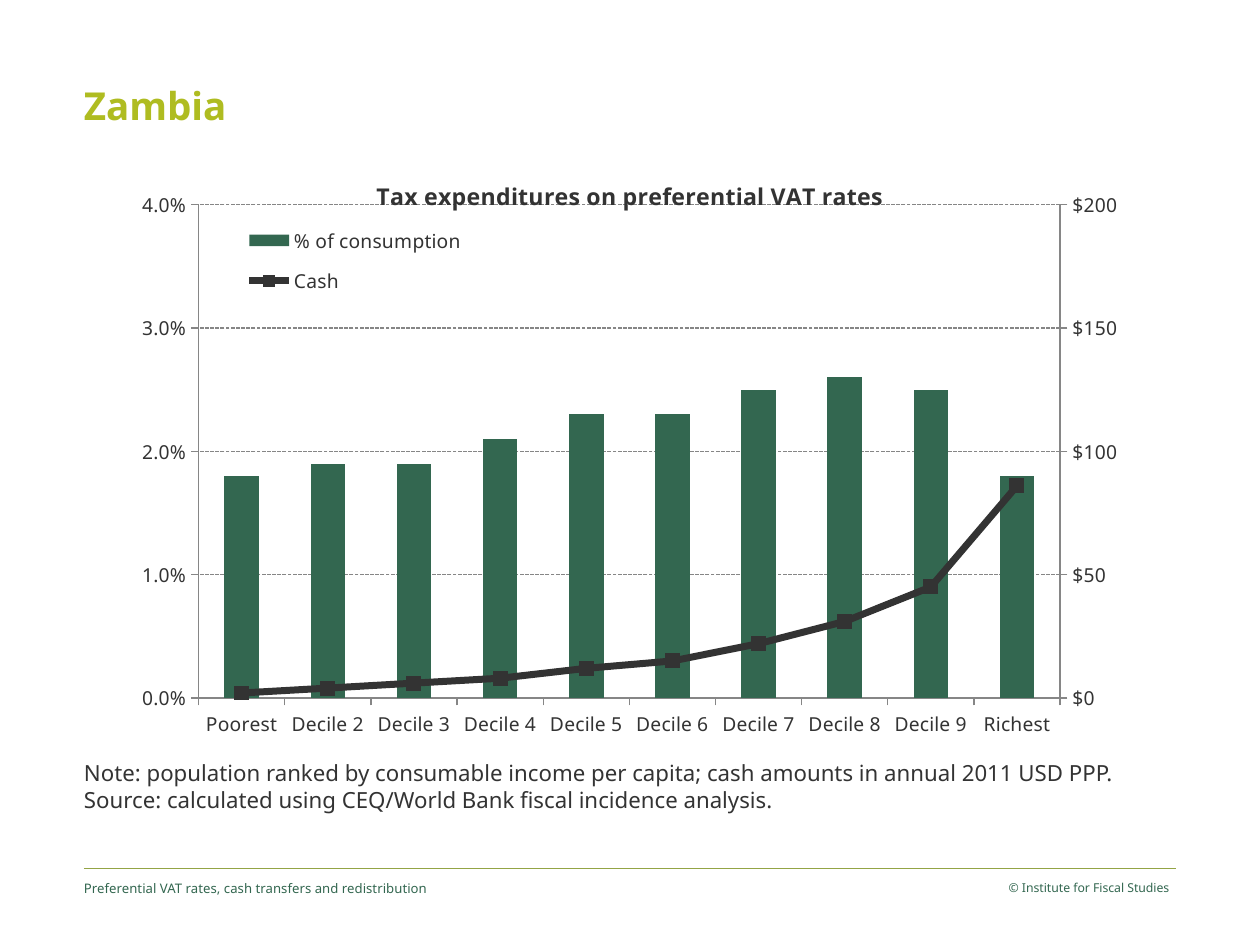
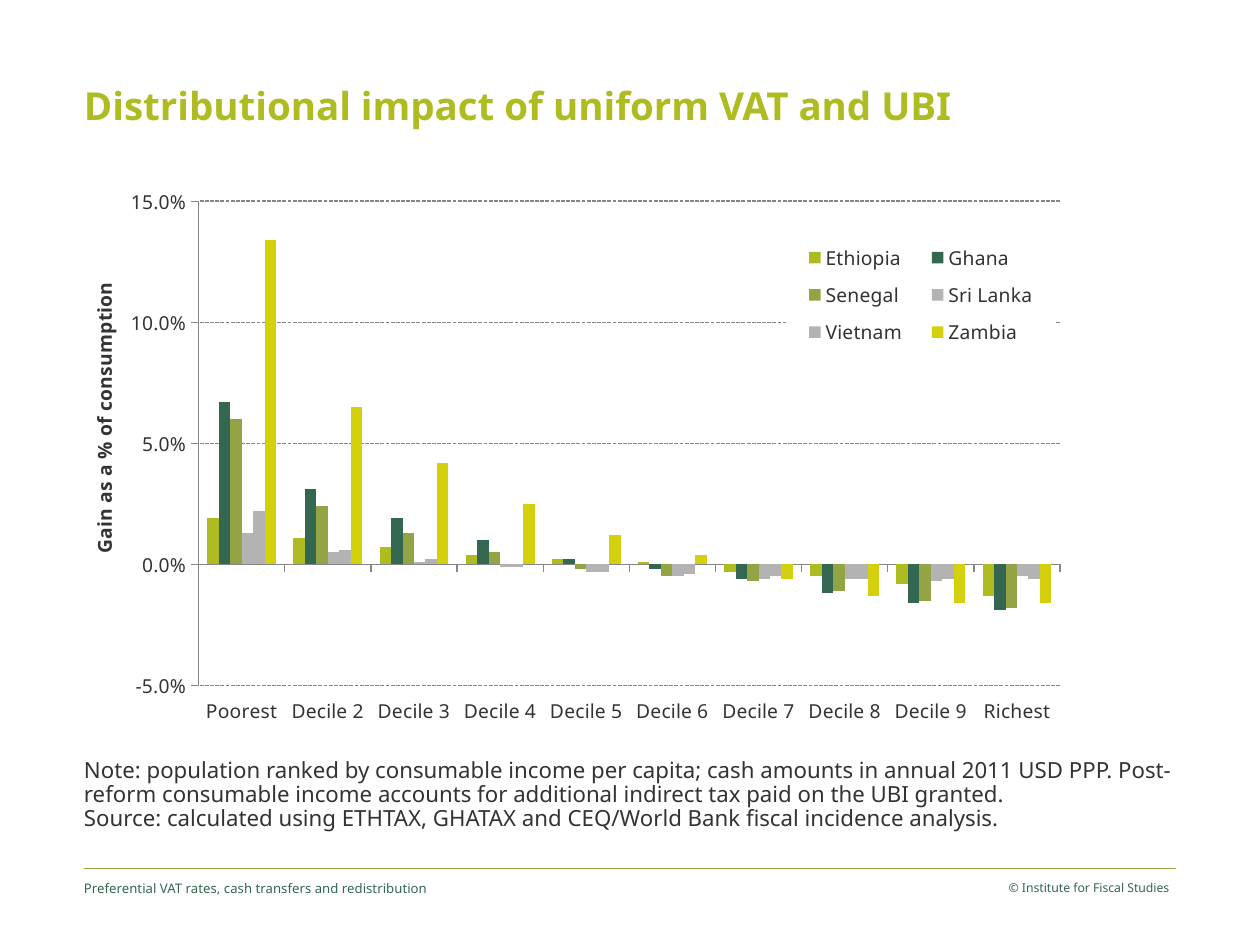
from copy import deepcopy

from lxml import etree
from pptx import Presentation
from pptx.chart.axis import CategoryAxis, ValueAxis
from pptx.chart.data import CategoryChartData
from pptx.dml.color import RGBColor
from pptx.enum.chart import (XL_CHART_TYPE, XL_LEGEND_POSITION, XL_MARKER_STYLE,
                             XL_TICK_LABEL_POSITION, XL_TICK_MARK)
from pptx.enum.dml import MSO_LINE_DASH_STYLE
from pptx.enum.shapes import MSO_CONNECTOR
from pptx.enum.text import PP_ALIGN
from pptx.oxml import parse_xml
from pptx.oxml.ns import nsdecls, qn
from pptx.util import Inches, Pt

LIME = RGBColor(0xAF, 0xBC, 0x21)
GREEN = RGBColor(0x33, 0x67, 0x50)
OLIVE = RGBColor(0x93, 0xA4, 0x45)
SILVER = RGBColor(0xB3, 0xB3, 0xB3)
YELLOW = RGBColor(0xD4, 0xD0, 0x0E)
CHARCOAL = RGBColor(0x33, 0x33, 0x33)
AXIS_GREY = RGBColor(0x86, 0x86, 0x86)

COLUMN_CLUSTERED = XL_CHART_TYPE.COLUMN_CLUSTERED
LEGEND_RIGHT = XL_LEGEND_POSITION.RIGHT
LABELS_LOW = XL_TICK_LABEL_POSITION.LOW
TICK_OUTSIDE, TICK_NONE = XL_TICK_MARK.OUTSIDE, XL_TICK_MARK.NONE
SQUARE_MARKER = XL_MARKER_STYLE.SQUARE
DASHED = MSO_LINE_DASH_STYLE.SQUARE_DOT
STRAIGHT = MSO_CONNECTOR.STRAIGHT
LEFT, RIGHT = PP_ALIGN.LEFT, PP_ALIGN.RIGHT

FONT = "Noto Sans"
GRID_COLUMNS, GRID_ROWS = 15, 30
MARGIN, CONTENT_COLUMNS = 1, 13
CHART_BOTTOM = 23.52

FOOTER = "Preferential VAT rates, cash transfers and redistribution"
COPYRIGHT = "© Institute for Fiscal Studies"
NOTE = ("Note: population ranked by consumable income per capita; "
        "cash amounts in annual 2011 USD PPP.")
DECILES = ["Poorest", *(f"Decile {number}" for number in range(2, 10)), "Richest"]

ZAMBIA_SHARE = [0.018, 0.019, 0.019, 0.021, 0.023, 0.023, 0.025, 0.026, 0.025, 0.018]
ZAMBIA_CASH = [2, 4, 6, 8, 12, 15, 22, 31, 45, 86]
GAINS = {
    "Ethiopia": [0.019, 0.011, 0.007, 0.004, 0.002, 0.001, -0.003, -0.005, -0.008, -0.013],
    "Ghana": [0.067, 0.031, 0.019, 0.01, 0.002, -0.002, -0.006, -0.012, -0.016, -0.019],
    "Senegal": [0.06, 0.024, 0.013, 0.005, -0.002, -0.005, -0.007, -0.011, -0.015, -0.018],
    "Sri Lanka": [0.013, 0.005, 0.001, -0.001, -0.003, -0.005, -0.006, -0.006, -0.007, -0.005],
    "Vietnam": [0.022, 0.006, 0.002, -0.001, -0.003, -0.004, -0.005, -0.006, -0.006, -0.006],
    "Zambia": [0.134, 0.065, 0.042, 0.025, 0.012, 0.004, -0.006, -0.013, -0.016, -0.016],
}
COUNTRY_COLORS = [LIME, GREEN, OLIVE, SILVER, SILVER, YELLOW]


def set_layout(parent, x, y, width=None, height=None, inner=False):
    """Place a chart part by shares of the chart's size."""
    for old_layout in parent.xpath("c:layout"):
        parent.remove(old_layout)
    settings = [("layoutTarget", "inner")] if inner else []
    settings += [("xMode", "edge"), ("yMode", "edge"), ("x", x), ("y", y)]
    if width is not None:
        settings += [("w", width), ("h", height)]
    layout = parse_xml(f"<c:layout {nsdecls('c')}><c:manualLayout/></c:layout>")
    for tag, value in settings:
        etree.SubElement(layout[0], qn(f"c:{tag}")).set("val", str(value))
    parent.insert(len(parent.xpath("c:tx|c:legendPos")), layout)


def style_axis(axis):
    axis.major_tick_mark = TICK_OUTSIDE
    axis.minor_tick_mark = TICK_NONE
    axis.format.line.color.rgb = AXIS_GREY
    axis.format.line.width = Pt(0.75)


def set_scale(axis, minimum, maximum, step, number_format):
    axis.minimum_scale, axis.maximum_scale, axis.major_unit = minimum, maximum, step
    axis.tick_labels.number_format = number_format
    axis.tick_labels.number_format_is_linked = False


def style_title(title, text, size, x, y):
    title.text_frame.text = text
    font = title.text_frame.paragraphs[0].runs[0].font
    font.name, font.size, font.bold = FONT, Pt(size), True
    font.color.rgb = CHARCOAL
    set_layout(title._element, x, y)


def move_last_series_to_line(chart, color, maximum, step, number_format):
    """Draw the last series as a line against a second value axis."""
    plot_area = chart.element.xpath("c:chart/c:plotArea")[0]
    bars = plot_area.xpath("c:barChart")[0]
    series_element = bars.xpath("c:ser")[-1]
    for element in series_element.xpath("c:invertIfNegative"):
        series_element.remove(element)
    category_id, value_id = "50010", "50020"
    line_chart = parse_xml(
        f'<c:lineChart {nsdecls("c")}><c:grouping val="standard"/><c:varyColors val="0"/>'
        f'<c:marker val="1"/><c:axId val="{category_id}"/><c:axId val="{value_id}"/>'
        "</c:lineChart>")
    line_chart.insert(2, series_element)
    bars.addnext(line_chart)

    category_element = deepcopy(plot_area.xpath("c:catAx")[0])
    value_element = deepcopy(plot_area.xpath("c:valAx")[0])
    plot_area.xpath("c:valAx")[0].addnext(value_element)
    value_element.addnext(category_element)
    for element, own_id, other_id in ((category_element, category_id, value_id),
                                      (value_element, value_id, category_id)):
        element.xpath("c:axId")[0].set("val", own_id)
        element.xpath("c:crossAx")[0].set("val", other_id)
    value_element.xpath("c:axPos")[0].set("val", "r")
    for crossing in value_element.xpath("c:crosses"):
        value_element.remove(crossing)
    value_element.xpath("c:crossAx")[0].addnext(
        parse_xml(f'<c:crosses {nsdecls("c")} val="max"/>'))
    CategoryAxis(category_element).visible = False
    cash_axis = ValueAxis(value_element)
    cash_axis.has_major_gridlines = False
    set_scale(cash_axis, 0, maximum, step, number_format)

    series = chart.plots[1].series[0]
    series.smooth = False
    series.format.line.color.rgb = color
    series.format.line.width = Pt(4)
    series.marker.style, series.marker.size = SQUARE_MARKER, 8
    series.marker.format.fill.solid()
    series.marker.format.fill.fore_color.rgb = color
    series.marker.format.line.color.rgb = color


class Deck:
    """Holds the shared style and the slide being filled."""

    def __init__(self):
        self.presentation = Presentation()
        self.presentation.slide_width = Inches(10)
        self.presentation.slide_height = Inches(7.5)
        self.column = self.presentation.slide_width / GRID_COLUMNS
        self.row = self.presentation.slide_height / GRID_ROWS
        self.slide = None

    def box(self, column, row, columns, rows):
        return (round(column * self.column), round(row * self.row),
                round(columns * self.column), round(rows * self.row))

    def add_slide(self, title):
        self.slide = self.presentation.slides.add_slide(self.presentation.slide_layouts[6])
        self.add_rule(27.58)
        self.add_text(title, (MARGIN, 2.6, 10.4, 1.76), 22, LIME, bold=True)
        self.add_text(COPYRIGHT, (11.4, 27.96, 2.52, 1.6), 7, GREEN, align=RIGHT)
        self.add_text(FOOTER, (MARGIN, 27.96, 4.75, 1.6), 7.5, GREEN)

    def add_rule(self, row):
        left, top, width, _ = self.box(MARGIN, row, CONTENT_COLUMNS, 0)
        rule = self.slide.shapes.add_connector(STRAIGHT, left, top, left + width, top)
        rule.line.color.rgb = OLIVE
        rule.line.width = Pt(0.75)
        etree.SubElement(rule._element.spPr, qn("a:effectLst"))

    def add_text(self, text, place, size, color, bold=False, align=LEFT, spacing=None):
        frame = self.slide.shapes.add_textbox(*self.box(*place)).text_frame
        frame.word_wrap = True
        frame.margin_left = frame.margin_right = frame.margin_top = frame.margin_bottom = 0
        frame.text = text
        paragraph = frame.paragraphs[0]
        paragraph.alignment = align
        paragraph.line_spacing = spacing
        for run in paragraph.runs:
            run.font.name, run.font.size, run.font.bold = FONT, Pt(size), bold
            run.font.color.rgb = color

    def add_note(self, text, rows, spacing):
        self.add_text(text, (MARGIN, 24.12, CONTENT_COLUMNS, rows), 12.7, CHARCOAL,
                      spacing=spacing)

    def add_column_chart(self, top, series_values, colors, scale, plot, legend_place):
        data = CategoryChartData(number_format="General")
        data.categories = DECILES
        for name, values in series_values.items():
            data.add_series(name, values)
        place = self.box(MARGIN, top, CONTENT_COLUMNS, CHART_BOTTOM - top)
        chart = self.slide.shapes.add_chart(COLUMN_CLUSTERED, *place, data).chart
        chart.has_title = False
        chart.font.name, chart.font.size = FONT, Pt(11)
        chart.font.color.rgb = CHARCOAL

        bars = chart.plots[0]
        bars.vary_by_categories = False
        bars.gap_width, bars.overlap = 150, 0
        for series, color in zip(bars.series, colors):
            series.invert_if_negative = False
            series.format.fill.solid()
            series.format.fill.fore_color.rgb = color

        style_axis(chart.category_axis)
        style_axis(chart.value_axis)
        set_scale(chart.value_axis, *scale, "0.0%")
        gridline = chart.value_axis.major_gridlines.format.line
        gridline.color.rgb = AXIS_GREY
        gridline.width = Pt(0.75)
        gridline.dash_style = DASHED
        set_layout(chart.element.xpath("c:chart/c:plotArea")[0], *plot, inner=True)
        self.add_legend(chart, legend_place)
        return chart

    def add_legend(self, chart, place):
        chart.has_legend = True
        chart.legend.position = LEGEND_RIGHT
        chart.legend.include_in_layout = False
        legend = chart.element.xpath("c:chart/c:legend")[0]
        set_layout(legend, *place)
        legend.xpath("c:overlay")[0].addnext(parse_xml(
            f'<c:spPr {nsdecls("c", "a")}><a:solidFill><a:srgbClr val="FFFFFF"/>'
            "</a:solidFill></c:spPr>"))


def add_zambia_slide(deck):
    deck.add_slide("Zambia")
    deck.add_note(f"{NOTE}\vSource: calculated using CEQ/World Bank fiscal incidence analysis.",
                  2.2, 1.0)
    chart = deck.add_column_chart(
        4.92, {"% of consumption": ZAMBIA_SHARE, "Cash": ZAMBIA_CASH}, [GREEN, CHARCOAL],
        (0, 0.04, 0.01), (0.105, 0.085, 0.789, 0.842), (0.141, 0.099, 0.215, 0.163))
    move_last_series_to_line(chart, CHARCOAL, 200, 50, r"[$$-409]#,##0;\-[$$-409]#,##0")
    chart.has_title = True
    style_title(chart.chart_title, "Tax expenditures on preferential VAT rates",
                13.2, 0.264, 0.032)


def add_distribution_slide(deck):
    deck.add_slide("Distributional impact of uniform VAT and UBI")
    deck.add_note(f"{NOTE} Post-reform consumable income accounts for additional indirect tax "
                  "paid on the UBI granted.\vSource: calculated using ETHTAX, GHATAX and "
                  "CEQ/World Bank fiscal incidence analysis.", 2.84, 0.9)
    chart = deck.add_column_chart(
        5.56, GAINS, COUNTRY_COLORS, (-0.05, 0.15, 0.05),
        (0.105, 0.046, 0.789, 0.856), (0.643, 0.103, 0.247, 0.217))
    chart.category_axis.tick_label_position = LABELS_LOW
    axis_title = chart.value_axis.axis_title
    style_title(axis_title, "Gain as a % of consumption", 11, 0.001, 0.183)
    chart.element.xpath("//c:valAx/c:title//a:bodyPr")[0].set("rot", "-5400000")


def main():
    deck = Deck()
    add_zambia_slide(deck)
    add_distribution_slide(deck)
    deck.presentation.save("out.pptx")


if __name__ == "__main__":
    main()
